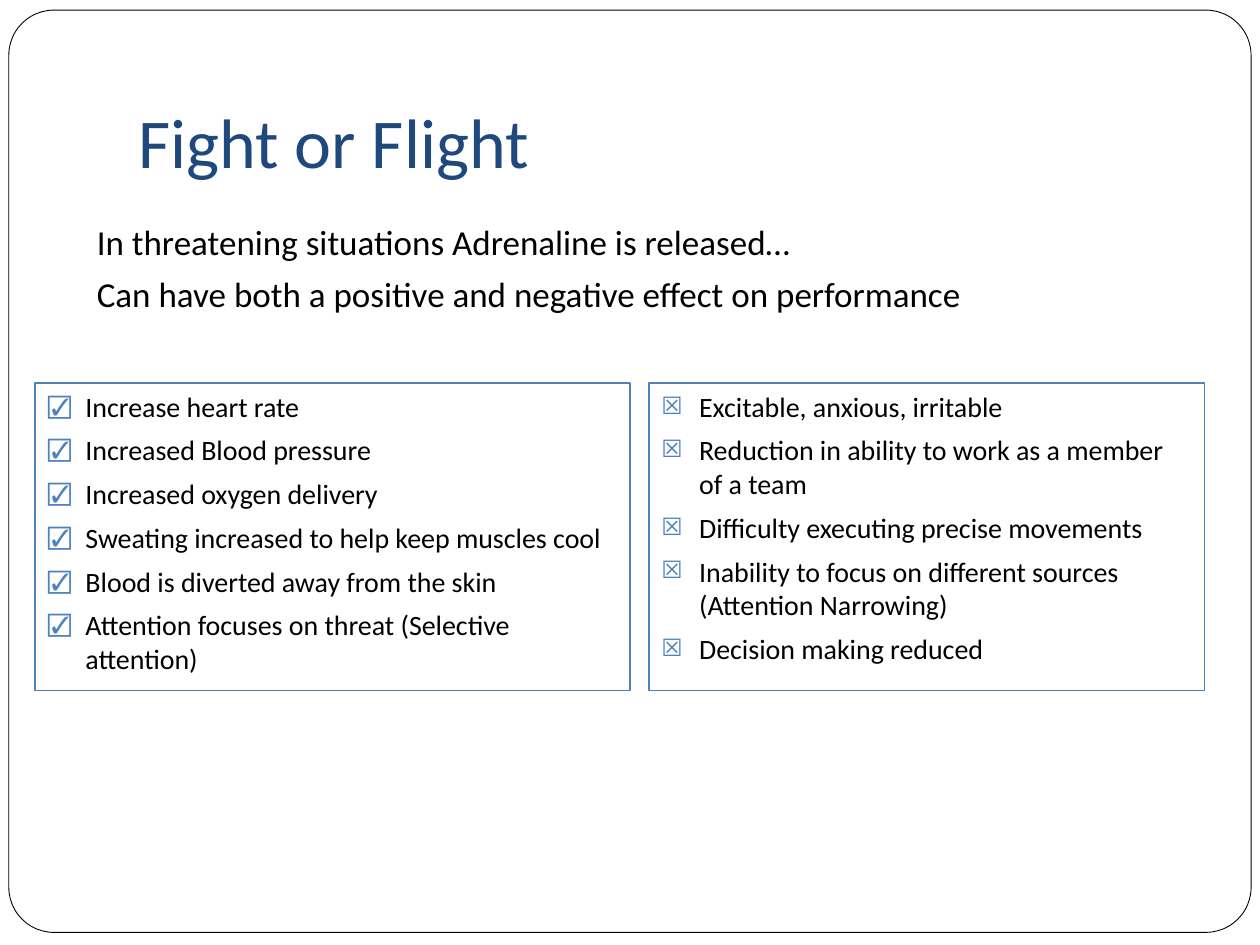
from dataclasses import dataclass
from lxml.etree import SubElement
from pptx import Presentation
from pptx.dml.color import RGBColor
from pptx.enum.shapes import MSO_SHAPE
from pptx.enum.text import MSO_ANCHOR, MSO_AUTO_SIZE, PP_ALIGN
from pptx.oxml.ns import qn
from pptx.util import Inches, Pt


@dataclass(frozen=True)
class Theme:
    """Hold the colours, font and sizes of the slide."""
    font: str = "Calibri"
    ink: RGBColor = RGBColor(0, 0, 0)
    paper: RGBColor = RGBColor(255, 255, 255)
    navy: RGBColor = RGBColor(0x1F, 0x49, 0x7D)
    blue: RGBColor = RGBColor(0x4F, 0x81, 0xBD)
    head: int = 40
    lead: int = 20
    item: int = 16
    gap: float = 5.8
    mark: int = 85


THEME = Theme()
GOOD = [
    "Increase heart rate",
    "Increased Blood pressure",
    "Increased oxygen delivery",
    "Sweating increased to help keep muscles cool",
    "Blood is diverted away from the skin",
    "Attention focuses on threat (Selective attention)",
]
BAD = [
    "Excitable, anxious, irritable",
    "Reduction in ability to work as a member of a team",
    "Difficulty executing precise movements",
    "Inability to focus on different sources (Attention Narrowing)",
    "Decision making reduced",
]
LEAD = [
    "In threatening situations Adrenaline is released…",
    "Can have both a positive and negative effect on performance",
]


def add_run(para, text, size, tint):
    """Add one styled run to a paragraph."""
    run = para.add_run()
    run.text = text
    run.font.name = THEME.font
    run.font.size = Pt(size)
    run.font.color.rgb = tint


def add_mark(para, mark):
    """Give a paragraph a hanging bullet."""
    props = para._p.get_or_add_pPr()
    props.set("marL", str(Inches(0.3)))
    props.set("indent", str(Inches(-0.3)))
    tint = SubElement(props, qn("a:buClr"))
    SubElement(tint, qn("a:srgbClr"), val=str(THEME.blue))
    SubElement(props, qn("a:buSzPct"), val=str(THEME.mark * 1000))
    SubElement(props, qn("a:buFont"), typeface=THEME.font)
    SubElement(props, qn("a:buChar"), char=mark)


def fill_text(frame, lines, size, mark=None):
    """Write spaced lines into a text frame."""
    frame.word_wrap = True
    frame.vertical_anchor = MSO_ANCHOR.TOP
    for i, line in enumerate(lines):
        para = frame.add_paragraph() if i else frame.paragraphs[0]
        para.alignment = PP_ALIGN.LEFT
        para.space_before = Pt(THEME.gap)
        if mark:
            add_mark(para, mark)
        add_run(para, line, size, THEME.ink)


def add_panel(slide, kind, box, tint, width):
    """Draw a white outlined panel in the box."""
    panel = slide.shapes.add_shape(kind, *map(Inches, box))
    panel.shadow.inherit = False
    panel.fill.solid()
    panel.fill.fore_color.rgb = THEME.paper
    panel.line.color.rgb = tint
    panel.line.width = Pt(width)
    return panel


def add_border(slide, box):
    """Draw the rounded border behind the title."""
    border = add_panel(slide, MSO_SHAPE.ROUNDED_RECTANGLE, box, THEME.ink, 0.5)
    border.adjustments[0] = 0.049
    slide.shapes.title._element.addprevious(border._element)


def set_title(slide, box, text):
    """Place and format the title."""
    title = slide.shapes.title
    title.left, title.top, title.width, title.height = map(Inches, box)
    frame = title.text_frame
    frame.auto_size = MSO_AUTO_SIZE.NONE
    frame.vertical_anchor = MSO_ANCHOR.BOTTOM
    frame.margin_bottom = Inches(0.1)
    para = frame.paragraphs[0]
    para.alignment = PP_ALIGN.LEFT
    add_run(para, text, THEME.head, THEME.navy)


def add_lead(slide, box, lines):
    """Add the opening lines."""
    lead = slide.shapes.add_textbox(*map(Inches, box))
    fill_text(lead.text_frame, lines, THEME.lead)


def add_list(slide, box, lines, mark):
    """Add a framed list with the given mark."""
    panel = add_panel(slide, MSO_SHAPE.RECTANGLE, box, THEME.blue, 1)
    fill_text(panel.text_frame, lines, THEME.item, mark)


def main():
    """Build and save the slide."""
    deck = Presentation()
    deck.slide_width, deck.slide_height = Inches(10), Inches(7.5)
    slide = deck.slides.add_slide(deck.slide_layouts[5])
    add_border(slide, (0.07, 0.08, 9.86, 7.32))
    set_title(slide, (1, 0.3, 8.5, 1.25), "Fight or Flight")
    add_list(slide, (0.28, 3.04, 4.72, 2.44), GOOD, "☑")
    add_list(slide, (5.15, 3.04, 4.41, 2.44), BAD, "☒")
    add_lead(slide, (0.67, 1.7, 8.66, 0.94), LEAD)
    deck.save("out.pptx")


if __name__ == "__main__":
    main()
